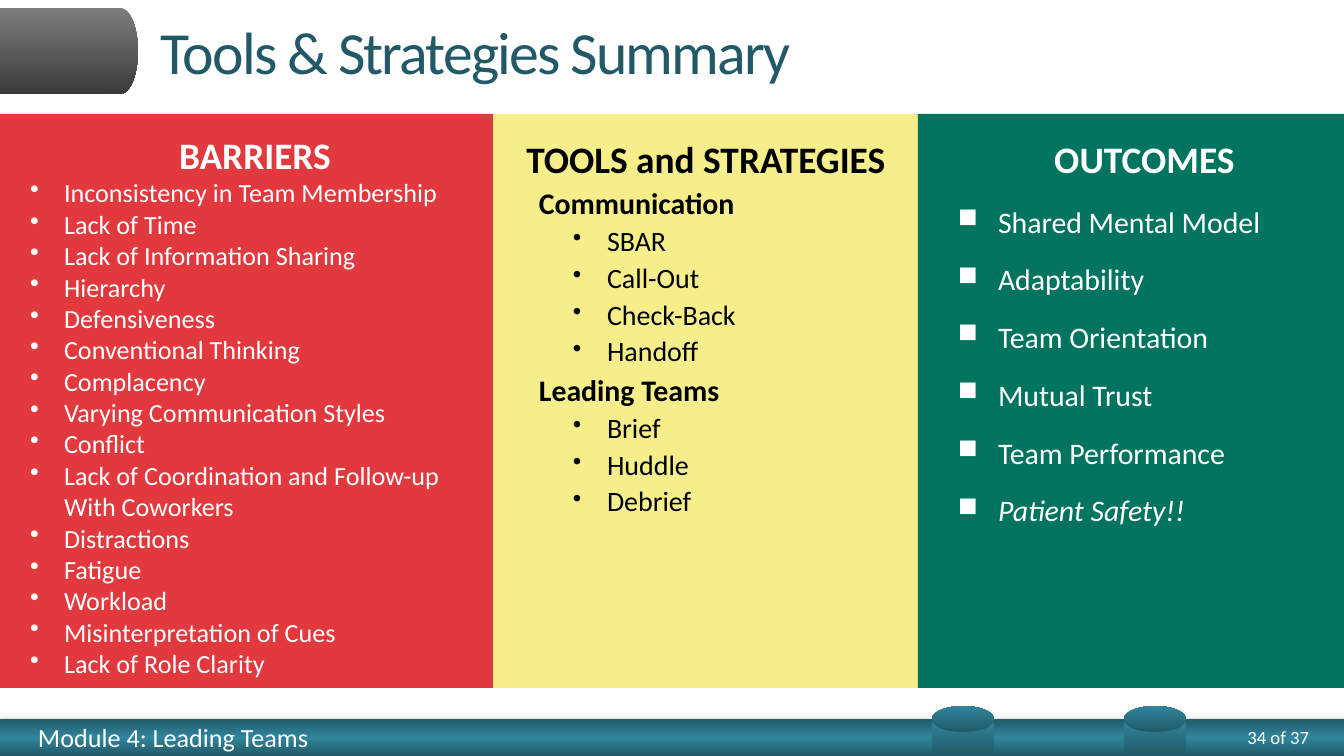
from copy import deepcopy
from dataclasses import dataclass

from lxml import etree
from pptx import Presentation
from pptx.dml.color import RGBColor
from pptx.enum.shapes import MSO_SHAPE
from pptx.enum.text import MSO_ANCHOR, PP_ALIGN
from pptx.oxml.ns import qn
from pptx.util import Emu, Pt

RECT, OVAL = MSO_SHAPE.RECTANGLE, MSO_SHAPE.OVAL
TOP, MIDDLE = MSO_ANCHOR.TOP, MSO_ANCHOR.MIDDLE
LEFT, CENTER, RIGHT = PP_ALIGN.LEFT, PP_ALIGN.CENTER, PP_ALIGN.RIGHT
SCALE = 914400 / 134.4


@dataclass(frozen=True)
class Theme:
    font: str = "Calibri"
    white: str = "FFFFFF"
    black: str = "000000"
    teal: str = "215968"
    aqua: str = "31859C"
    gray: str = "7D7D7D"
    coal: str = "3B3B3B"
    red: str = "E1393E"
    yellow: str = "F5EE8B"
    green: str = "017460"
    title: int = 32
    head: int = 20
    lead: int = 16
    item: int = 15
    body: int = 14
    small: int = 10


THEME = Theme()


def px(n):
    return Emu(round(n * SCALE))


def rgb(code):
    return RGBColor.from_string(code)


def add_bullet(para, mark, color, size):
    props = para._p.get_or_add_pPr()
    tint = etree.SubElement(props, qn("a:buClr"))
    etree.SubElement(tint, qn("a:srgbClr"), val=color)
    etree.SubElement(props, qn("a:buSzPct"), val=str(size * 1000))
    etree.SubElement(props, qn("a:buChar"), char=mark)


def write(frame, text, size, color, bold=False, italic=False, align=LEFT,
          line=1.0, before=0, margin=0, indent=0, mark=None, scale=90,
          track=0):
    """Add one paragraph, filling the empty first one if it is still free."""
    para = frame.paragraphs[-1]
    if para.runs:
        para = frame.add_paragraph()
        para.space_before = Pt(before)
    props = para._p.get_or_add_pPr()
    props.set("marL", str(px(margin)))
    props.set("indent", str(px(indent)))
    if mark:
        add_bullet(para, mark, color, scale)
    para.alignment = align
    para.line_spacing = line
    run = para.add_run()
    run.text = text
    font = run.font
    font.name, font.size = THEME.font, Pt(size)
    font.bold, font.italic = bold, italic
    font.color.rgb = rgb(color)
    if track:
        run._r.get_or_add_rPr().set("spc", str(track * 100))


class Board:
    def __init__(self, slide, theme):
        self.slide = slide
        self.theme = theme

    def shape(self, kind, box, turn=0):
        item = self.slide.shapes.add_shape(kind, *map(px, box))
        item.shadow.inherit = False
        item.line.fill.background()
        item.rotation = turn
        return item

    def blend(self, kind, box, colors, angle, turn=0):
        """Draw a shape with evenly spaced gradient stops."""
        item = self.shape(kind, box, turn)
        fill = item.fill
        fill.gradient()
        fill.gradient_angle = -angle % 360
        stops = item._element.spPr.find(".//" + qn("a:gsLst"))
        while len(stops) < len(colors):
            stops.append(deepcopy(stops[-1]))
        for i, (stop, color) in enumerate(zip(fill.gradient_stops, colors)):
            stop.color.rgb = rgb(color)
            stop.position = i / (len(colors) - 1)
        return item

    def shade(self, item):
        effects = item._element.spPr.find(qn("a:effectLst"))
        outer = etree.SubElement(
            effects, qn("a:outerShdw"), blurRad=str(Pt(3.1)),
            dist=str(Pt(1)), dir="5400000", rotWithShape="0")
        color = etree.SubElement(outer, qn("a:srgbClr"), val=self.theme.black)
        etree.SubElement(color, qn("a:alpha"), val="35000")

    def setup(self, frame, inset, anchor):
        frame.word_wrap = True
        frame.vertical_anchor = anchor
        (frame.margin_left, frame.margin_top,
         frame.margin_right, frame.margin_bottom) = map(px, inset)
        return frame

    def label(self, text, box, inset=(0, 0, 0, 0), **style):
        item = self.slide.shapes.add_textbox(*map(px, box))
        write(self.setup(item.text_frame, inset, MIDDLE), text, **style)

    def panel(self, left, width, color):
        item = self.shape(RECT, (left, 114, width, 574))
        item.fill.solid()
        item.fill.fore_color.rgb = rgb(color)
        return self.setup(item.text_frame, (13, 27, 13, 7), TOP)


def draw_frame(board):
    t = board.theme
    bar = board.blend(RECT, (0, 719, 1344, 37), (t.teal, t.aqua, t.teal), 270)
    board.shade(bar)
    board.label("Module 4: Leading Teams", (38, 719, 720, 37),
                size=t.body, color=t.white)
    board.label("34 of 37", (1200, 719, 109, 37),
                size=t.small, color=t.white, align=RIGHT)
    for kind, left, width in ((RECT, 0, 121), (OVAL, 103, 35)):
        board.blend(kind, (left, 8, width, 86), (t.gray, t.coal), 90)
    for left in (945, 1137):
        for kind, box in ((RECT, (left, 707, 36, 62)),
                          (OVAL, (left + 5, 688, 26, 62))):
            board.blend(kind, box, (t.teal, t.aqua), 0, turn=270)
    board.label("Tools & Strategies Summary", (148, 0, 1179, 101),
                (13, 7, 13, 7), size=t.title, color=t.teal, track=-1)


def draw_tools(board):
    t = board.theme
    frame = board.panel(493, 426, t.yellow)
    base = dict(color=t.black, line=0.9)
    write(frame, "TOOLS and STRATEGIES", t.head, bold=True, align=CENTER,
          **base)
    groups = {
        "Communication": ("SBAR", "Call-Out", "Check-Back", "Handoff"),
        "Leading Teams": ("Brief", "Huddle", "Debrief"),
    }
    for name, tools in groups.items():
        write(frame, name, t.lead, bold=True, before=4, margin=67, indent=-34,
              **base)
        for tool in tools:
            write(frame, tool, t.item, before=3.5, margin=101, indent=-34,
                  mark="•", **base)


def draw_goals(board):
    t = board.theme
    frame = board.panel(918, 426, t.green)
    base = dict(color=t.white, margin=67, indent=-40)
    write(frame, "OUTCOMES", t.head, bold=True, align=CENTER, line=0.9, **base)
    goals = ("Shared Mental Model", "Adaptability", "Team Orientation",
             "Mutual Trust", "Team Performance", "Patient Safety!!")
    for goal in goals:
        write(frame, goal, t.lead, italic=goal == goals[-1], line=1.3,
              before=6, mark="■", **base)


def draw_limits(board):
    t = board.theme
    frame = board.panel(0, 493, t.red)
    base = dict(color=t.white, margin=51, indent=-34)
    write(frame, "BARRIERS", t.head, bold=True, align=CENTER, line=0.8, **base)
    for limit in (
        "Inconsistency in Team Membership", "Lack of Time",
        "Lack of Information Sharing", "Hierarchy", "Defensiveness",
        "Conventional Thinking", "Complacency",
        "Varying Communication Styles", "Conflict",
        "Lack of Coordination and Follow-up With Coworkers",
        "Distractions", "Fatigue", "Workload", "Misinterpretation of Cues",
        "Lack of Role Clarity",
    ):
        write(frame, limit, t.body, line=Pt(16.8), mark="•", scale=100, **base)


def main():
    deck = Presentation()
    deck.slide_width, deck.slide_height = px(1344), px(756)
    board = Board(deck.slides.add_slide(deck.slide_layouts[6]), THEME)
    draw_frame(board)
    draw_tools(board)
    draw_goals(board)
    draw_limits(board)
    deck.save("out.pptx")


if __name__ == "__main__":
    main()
